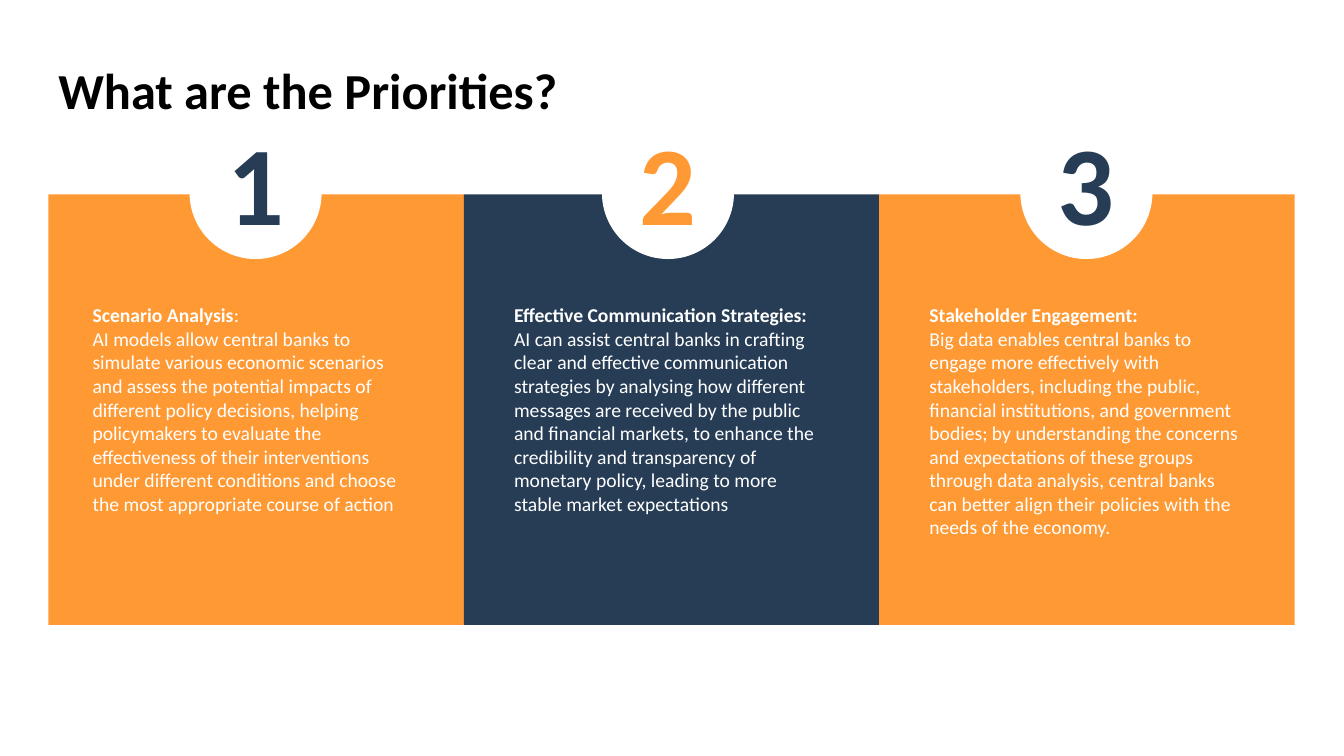
"""Build the slide with three numbered priorities for central banks."""
from pptx import Presentation
from pptx.dml.color import RGBColor
from pptx.enum.shapes import MSO_SHAPE as SHAPE
from pptx.enum.text import MSO_ANCHOR as ANCHOR, PP_ALIGN as ALIGN
from pptx.util import Inches, Pt

ORANGE = RGBColor(0xFF, 0x99, 0x33)
NAVY = RGBColor(0x27, 0x3D, 0x56)
WHITE = RGBColor(0xFF, 0xFF, 0xFF)
BLACK = RGBColor(0x00, 0x00, 0x00)

LEFT, TOP = 0.48, 1.93
COL_W, COL_H = 4.12, 4.27
CIRCLE = 1.31
CIRCLE_TOP = 1.26
DIGIT_W = 0.77
BODY_TOP = 2.96

PRIORITIES = [
    (ORANGE, NAVY, 1.88, (0.82, 3.43, 2.22), [("Scenario Analysis", True), (":", False)],
     "AI models allow central banks to simulate various economic scenarios and "
     "assess the potential impacts of different policy decisions, helping "
     "policymakers to evaluate the effectiveness of their interventions under "
     "different conditions and choose the most appropriate course of action"),
    (NAVY, ORANGE, 5.97, (5, 3.31, 2.22), [("Effective Communication Strategies:", True)],
     "AI can assist central banks in crafting clear and effective communication "
     "strategies by analysing how different messages are received by the public "
     "and financial markets, to enhance the credibility and transparency of "
     "monetary policy, leading to more stable market expectations"),
    (ORANGE, NAVY, 10.12, (9.12, 3.33, 2.46), [("Stakeholder Engagement:", True)],
     "Big data enables central banks to engage more effectively with "
     "stakeholders, including the public, financial institutions, and government "
     "bodies; by understanding the concerns and expectations of these groups "
     "through data analysis, central banks can better align their policies with "
     "the needs of the economy."),
]

prs = Presentation()
prs.slide_width, prs.slide_height = Inches(13.33), Inches(7.5)
s = prs.slides.add_slide(prs.slide_layouts[6])


def add_shape(kind, x, y, w, h, color):
    sp = s.shapes.add_shape(kind, Inches(x), Inches(y), Inches(w), Inches(h))
    sp.shadow.inherit = False
    sp.fill.solid()
    sp.fill.fore_color.rgb = color
    sp.line.fill.background()


def add_text(x, y, w, h, paragraphs, size, color, wrap=True):
    tf = s.shapes.add_textbox(Inches(x), Inches(y), Inches(w), Inches(h)).text_frame
    tf.word_wrap = wrap
    for i, runs in enumerate(paragraphs):
        p = tf.add_paragraph() if i else tf.paragraphs[0]
        for text, bold in runs:
            r = p.add_run()
            r.text = text
            r.font.name = "Calibri"
            r.font.size = Pt(size)
            r.font.bold = bold
            r.font.color.rgb = color
    return tf


title = add_text(LEFT, 0.6, 11.89, 0.65, [[("What are the Priorities?", True)]], 36, BLACK)
title.vertical_anchor = ANCHOR.MIDDLE
title.paragraphs[0].line_spacing = 0.9

for i, (panel, accent, circle_x, (x, w, h), heading, body) in enumerate(PRIORITIES):
    add_shape(SHAPE.RECTANGLE, LEFT + i * COL_W, TOP, COL_W, COL_H, panel)
    add_shape(SHAPE.OVAL, circle_x, CIRCLE_TOP, CIRCLE, CIRCLE, WHITE)
    digit = add_text(circle_x + (CIRCLE - DIGIT_W) / 2, 1.08, DIGIT_W, 1.45,
                     [[(str(i + 1), True)]], 80, accent, wrap=False)
    digit.paragraphs[0].alignment = ALIGN.CENTER
    add_text(x, BODY_TOP, w, h, [heading, [(body, False)]], 14, WHITE)

prs.save("out.pptx")
